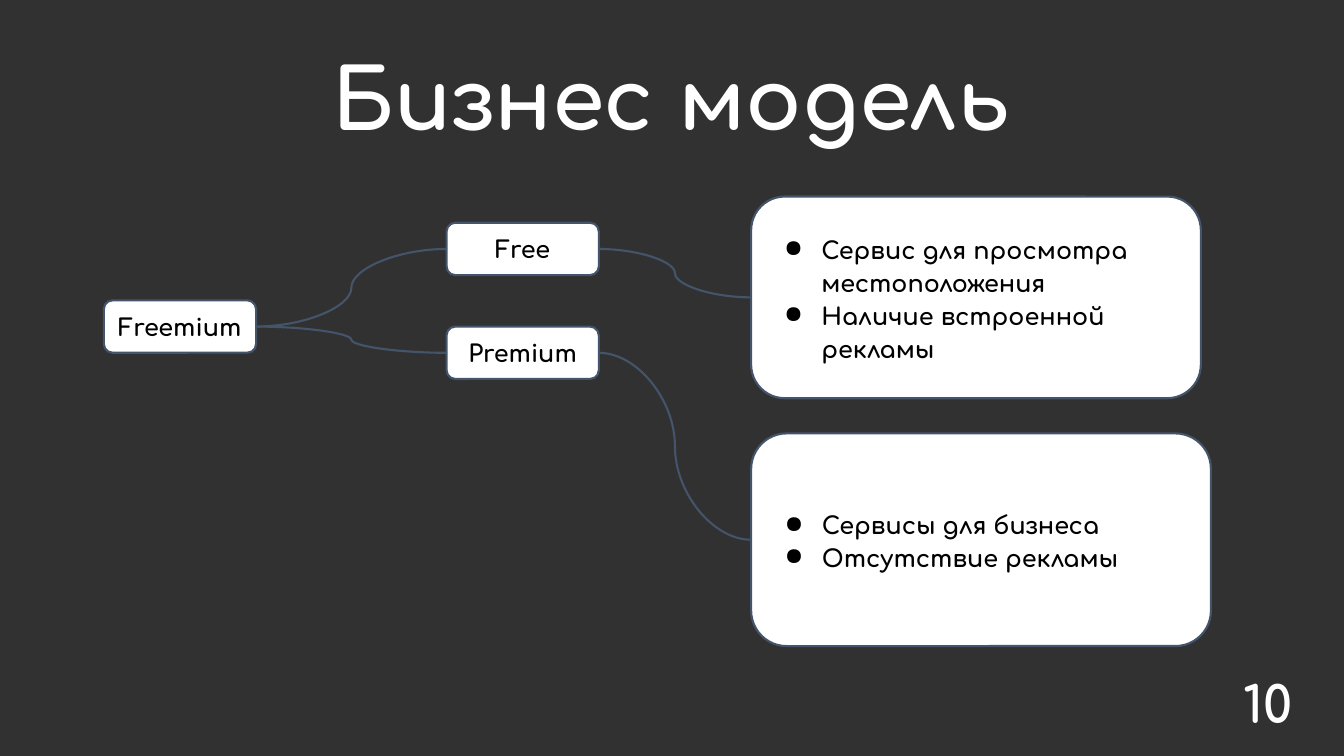
from lxml.etree import SubElement
from pptx import Presentation
from pptx.dml.color import RGBColor
from pptx.enum.shapes import MSO_CONNECTOR, MSO_SHAPE
from pptx.enum.text import MSO_ANCHOR, PP_ALIGN
from pptx.oxml.ns import qn
from pptx.util import Inches, Pt

HUES = {"back": "313131", "white": "FFFFFF", "black": "000000", "edge": "44546A"}


def tint(name):
    return RGBColor.from_string(HUES[name])


class Board:
    face = "Comfortaa"
    small = 17
    edge = 1.5

    def __init__(self, deck):
        self.wide, self.high = deck.slide_width, deck.slide_height
        self.slide = deck.slides.add_slide(deck.slide_layouts[6])
        fill = self.slide.background.fill
        fill.solid()
        fill.fore_color.rgb = tint("back")

    def place(self, left, top, width, height):
        return [round(share * side / 100) for share, side in
                zip((left, top, width, height), (self.wide, self.high) * 2)]

    def style(self, para, size, hue, align):
        para.alignment = align
        font = para.font
        font.name, font.size, font.bold = self.face, Pt(size), True
        font.color.rgb = tint(hue)

    def frame(self, shape, anchor, inset=0.1):
        frame = shape.text_frame
        frame.word_wrap = True
        frame.vertical_anchor = anchor
        frame.margin_left = frame.margin_right = Inches(0.1)
        frame.margin_top = frame.margin_bottom = Inches(inset)
        return frame

    def label(self, text, spot, size, anchor, inset=0.1, space=1.0):
        box = self.slide.shapes.add_textbox(*self.place(*spot))
        para = self.frame(box, anchor, inset).paragraphs[0]
        para.text = text
        para.line_spacing = space
        self.style(para, size, "white", PP_ALIGN.CENTER)

    def card(self, spot):
        card = self.slide.shapes.add_shape(
            MSO_SHAPE.ROUNDED_RECTANGLE, *self.place(*spot))
        card.shadow.inherit = False
        card.fill.solid()
        card.fill.fore_color.rgb = tint("white")
        card.line.color.rgb = tint("edge")
        card.line.width = Pt(self.edge)
        return card

    def node(self, text, left, top):
        card = self.card((left, top, 11.33, 6.93))
        para = self.frame(card, MSO_ANCHOR.MIDDLE).paragraphs[0]
        para.text = text
        self.style(para, self.small, "black", PP_ALIGN.CENTER)
        return card

    def bullet(self, para):
        props = para._p.get_or_add_pPr()
        props.set("marL", str(Inches(0.5)))
        props.set("indent", str(Inches(-0.37)))
        hue = SubElement(props, qn("a:buClr"))
        SubElement(hue, qn("a:srgbClr"), val=HUES["black"])
        SubElement(props, qn("a:buChar"), char="●")

    def points(self, items, spot):
        card = self.card(spot)
        frame = self.frame(card, MSO_ANCHOR.MIDDLE)
        for rank, item in enumerate(items):
            para = frame.add_paragraph() if rank else frame.paragraphs[0]
            para.text = item
            para.line_spacing = 1.15
            para.space_before = Pt(0 if rank else 12)
            self.bullet(para)
            self.style(para, self.small, "black", PP_ALIGN.LEFT)
        return card

    def link(self, start, end):
        curve = self.slide.shapes.add_connector(MSO_CONNECTOR.CURVE, 0, 0, 0, 0)
        curve.begin_connect(start, 3)
        curve.end_connect(end, 1)
        curve.line.color.rgb = tint("edge")
        curve.line.width = Pt(self.edge)
        SubElement(curve._element.spPr, qn("a:effectLst"))


def main():
    deck = Presentation()
    deck.slide_width, deck.slide_height = Inches(13.33), Inches(7.5)
    board = Board(deck)

    board.label("Бизнес модель", (16.65, 5.73, 66.6, 15.73), 60,
                MSO_ANCHOR.MIDDLE, inset=0.05, space=0.9)
    board.label("10", (91.07, 87.73, 6.53, 10.8), 36, MSO_ANCHOR.TOP)

    root = board.node("Freemium", 7.73, 39.73)
    free = board.node("Free", 33.23, 29.47)
    paid = board.node("Premium", 33.23, 43.2)
    basic = board.points(
        ["Сервис для просмотра местоположения", "Наличие встроенной рекламы"],
        (55.89, 26, 33.46, 26.67))
    extra = board.points(
        ["Сервисы для бизнеса", "Отсутствие рекламы"],
        (55.89, 57.33, 34.21, 28.13))

    for start, end in ((root, free), (root, paid), (free, basic), (paid, extra)):
        board.link(start, end)

    deck.save("out.pptx")


if __name__ == "__main__":
    main()
